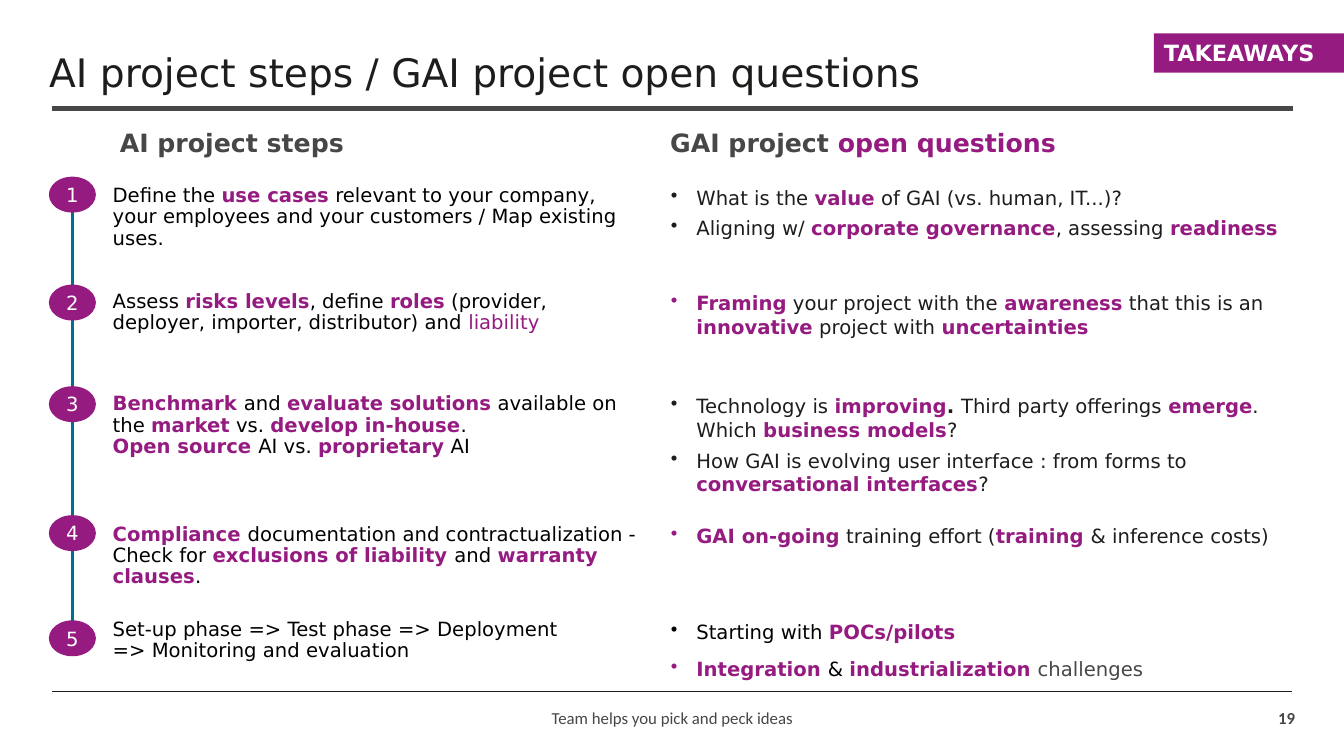
from copy import deepcopy
from dataclasses import dataclass

from lxml import etree
from pptx import Presentation
from pptx.dml.color import RGBColor
from pptx.enum.shapes import MSO_CONNECTOR, MSO_SHAPE
from pptx.enum.text import MSO_ANCHOR as Anchor, MSO_AUTO_SIZE as AutoSize, PP_ALIGN as Align
from pptx.oxml.ns import qn
from pptx.util import Cm, Pt


@dataclass(frozen=True)
class Theme:
    font: str = "DejaVu Sans"
    footer_font: str = "Calibri"
    accent: str = "951B81"
    timeline: str = "006D91"
    gray: str = "474747"
    dark: str = "1D1D1B"
    black: str = "000000"
    white: str = "FFFFFF"
    title_size: int = 28
    heading_size: int = 18
    tag_size: int = 16
    text_size: int = 14
    footer_size: int = 12


theme = Theme()

# A piece of text that starts with one of these marks gets its own (colour, bold);
# None keeps the colour of the surrounding text.
MARKS = {"*": (theme.accent, True), "_": (theme.accent, False),
         "^": (None, True), "~": (theme.gray, False)}


def write(shape, paragraphs, color, size=theme.text_size, font=theme.font, bold=False,
          anchor=Anchor.TOP, align=Align.LEFT, spacing=1.0, bullet=False, side=0.25):
    frame = shape.text_frame
    frame_format = {"word_wrap": True, "auto_size": AutoSize.NONE, "vertical_anchor": anchor,
                    "margin_left": Cm(side), "margin_right": Cm(side),
                    "margin_top": Cm(0.13), "margin_bottom": Cm(0.13)}
    for name, value in frame_format.items():
        setattr(frame, name, value)
    for index, text in enumerate(paragraphs):
        paragraph = frame.add_paragraph() if index else frame.paragraphs[0]
        paragraph_format = {"alignment": align, "line_spacing": spacing,
                            "space_before": Pt(10 if index else 0)}
        for name, value in paragraph_format.items():
            setattr(paragraph, name, value)
        if bullet:
            properties = paragraph._p.get_or_add_pPr()
            properties.set("marL", str(Cm(0.64)))
            properties.set("indent", str(-Cm(0.64)))
            etree.SubElement(properties, qn("a:buChar"), char="•")
        for piece in text.split("|"):
            if piece == "\n":
                paragraph.add_line_break()
                paragraph._p[-1].append(deepcopy(run.font._element))
                continue
            piece_color, piece_bold = MARKS.get(piece[0], (color, bold))
            run = paragraph.add_run()
            run.text = piece[1:] if piece[0] in MARKS else piece
            run_format = {"name": font, "size": Pt(size), "bold": piece_bold}
            for name, value in run_format.items():
                setattr(run.font, name, value)
            run.font.color.rgb = RGBColor.from_string(piece_color or color)


def add_filled(kind, left, top, width, height):
    shape = slide.shapes.add_shape(kind, Cm(left), Cm(top), Cm(width), Cm(height))
    shape.shadow.inherit = False
    shape.fill.solid()
    shape.fill.fore_color.rgb = RGBColor.from_string(theme.accent)
    shape.line.color.rgb = RGBColor.from_string(theme.accent)
    shape.line.width = Pt(1)
    return shape


presentation = Presentation()
presentation.slide_width, presentation.slide_height = Cm(33.87), Cm(19.05)
slide = presentation.slides.add_slide(presentation.slide_layouts.get_by_name("Comparison"))
title, steps_heading, steps_area, questions_heading, questions_area = slide.placeholders
for unused in (steps_area, questions_area):
    unused.element.getparent().remove(unused.element)

# Rules and timeline
for x1, y1, x2, y2, color, weight in [
    (1.32, 2.74, 32.59, 2.74, theme.gray, 3.25),
    (1.32, 17.42, 32.56, 17.42, theme.dark, 0.5),
    (1.83, 5.0, 1.83, 16.51, theme.timeline, 2.25),
]:
    rule = slide.shapes.add_connector(MSO_CONNECTOR.STRAIGHT, Cm(x1), Cm(y1), Cm(x2), Cm(y2))
    rule.line.color.rgb = RGBColor.from_string(color)
    rule.line.width = Pt(weight)
    etree.SubElement(rule._element.spPr, qn("a:effectLst"))

# Title and column headings
headings = [
    (title, (0.99, 1.02, 29.79, 1.75), "AI project steps / GAI project open questions",
     {"color": theme.dark, "size": theme.title_size, "anchor": Anchor.MIDDLE, "spacing": 0.9}),
    (steps_heading, (2.77, 3.07, 15.44, 1.07), "AI project steps",
     {"color": theme.gray, "size": theme.heading_size, "bold": True}),
    (questions_heading, (16.64, 3.07, 15.62, 1.07), "GAI project |*open questions",
     {"color": theme.gray, "size": theme.heading_size, "bold": True}),
]
for heading, box, text, text_format in headings:
    for name, value in zip(("left", "top", "width", "height"), box):
        setattr(heading, name, Cm(value))
    write(heading, [text], **text_format)

# Project steps: circle top, text top, text height, text
steps = [
    (4.47, 4.55, 1.88, "Define the |*use cases| relevant to your company, your employees "
                       "and your customers / Map existing uses."),
    (7.19, 7.21, 1.35, "Assess |*risks levels|, define |*roles| (provider, deployer, "
                       "importer, distributor) and |_liability"),
    (9.75, 9.8, 1.88, "*Benchmark |and |*evaluate solutions| available on the |*market| vs. "
                      "|*develop in-house|. |\n|*Open source |AI vs. |*proprietary| AI"),
    (13.0, 13.08, 1.88, "*Compliance |documentation and contractualization - Check for "
                        "|*exclusions of liability |and |*warranty clauses|."),
    (15.65, 15.49, 1.35, "Set-up phase => Test phase => Deployment |\n"
                         "|=> Monitoring and evaluation"),
]
for number, (circle_top, text_top, height, text) in enumerate(steps, start=1):
    circle = add_filled(MSO_SHAPE.OVAL, 1.25, circle_top, 1.15, 0.87)
    write(circle, [str(number)], theme.white, anchor=Anchor.MIDDLE, align=Align.CENTER, side=0)
    step = slide.shapes.add_textbox(Cm(2.59), Cm(text_top), Cm(13.79), Cm(height))
    write(step, [text], theme.black, spacing=0.9)

# Open questions: top, height, text colour, bullets
questions = [
    (4.55, 1.22, theme.dark, ["What is the |*value| of GAI (vs. human, IT...)?"]),
    (5.31, 1.3, theme.dark, ["Aligning w/ |*corporate governance|, assessing |*readiness"]),
    (7.21, 1.3, theme.dark, ["*Framing| your project with the |*awareness| that this is an "
                             "|*innovative| project with |*uncertainties"]),
    (9.8, 1.4, theme.dark, ["Technology is |*improving|^. |Third party offerings |*emerge"
                            "|. Which |*business models|?"]),
    (11.18, 1.37, theme.dark, ["How GAI is evolving user interface : from forms to "
                               "|*conversational interfaces|?"]),
    (13.08, 1.5, theme.dark, ["*GAI on-going| training effort (|*training |& inference costs)"]),
    (15.49, 0.84, theme.black, ["Starting with |*POCs/pilots",
                                "*Integration |& |*industrialization |~challenges"]),
]
for top, height, color, bullets in questions:
    question = slide.shapes.add_textbox(Cm(16.66), Cm(top), Cm(15.98), Cm(height))
    write(question, bullets, color, bullet=True)

# Takeaways tag
tag = add_filled(MSO_SHAPE.RECTANGLE, 29.08, 0.84, 4.79, 0.99)
tag.line.fill.background()
write(tag, ["TAKEAWAYS"], theme.white, theme.tag_size, bold=True, anchor=Anchor.MIDDLE)

# Footer
for left, width, text, align, bold in [
    (11.23, 11.43, "Team helps you pick and peck ideas", Align.CENTER, False),
    (30.48, 2.41, "19", Align.RIGHT, True),
]:
    footer = slide.shapes.add_textbox(Cm(left), Cm(17.58), Cm(width), Cm(1.02))
    write(footer, [text], theme.gray, theme.footer_size, theme.footer_font, bold,
          Anchor.MIDDLE, align)

presentation.save("out.pptx")
